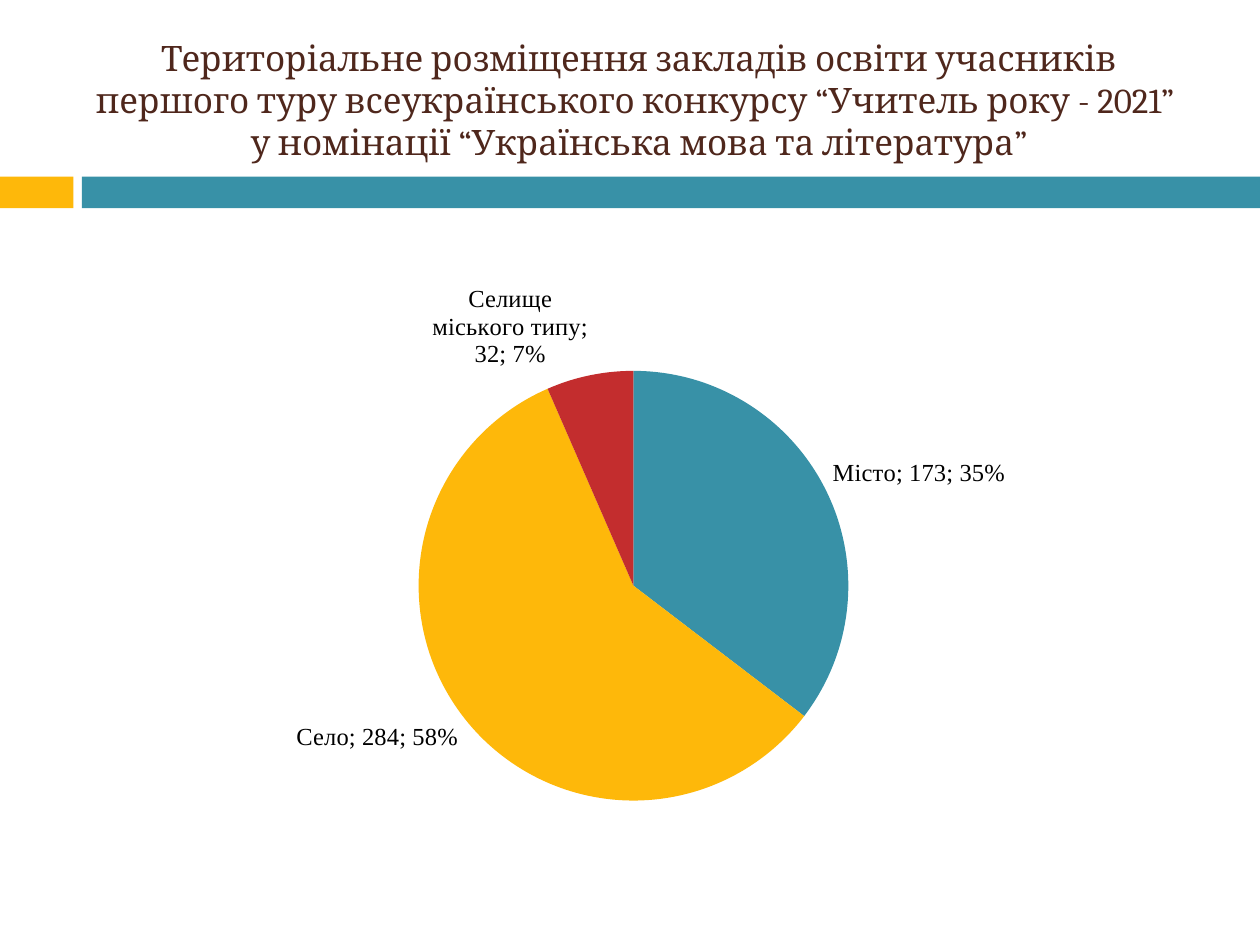
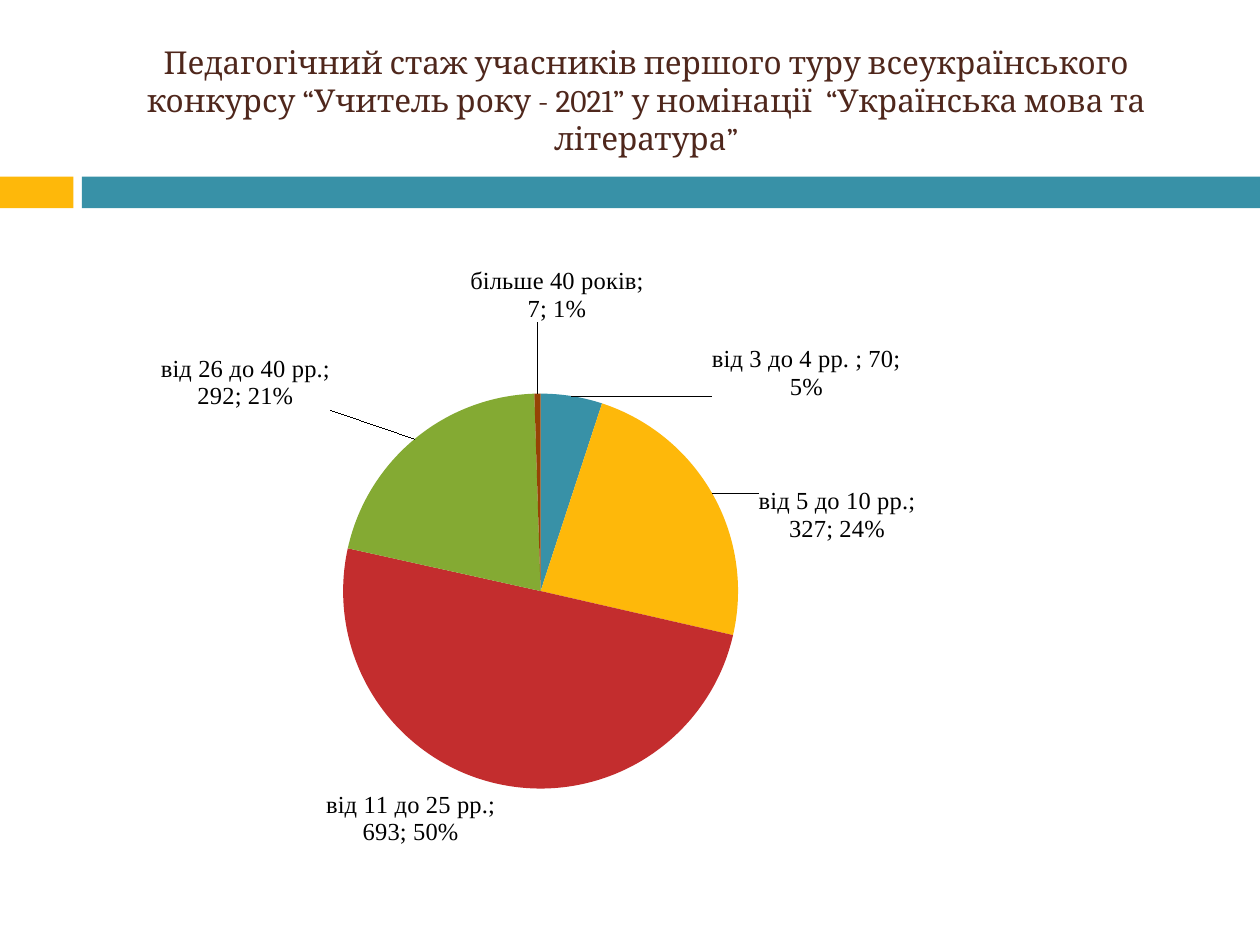
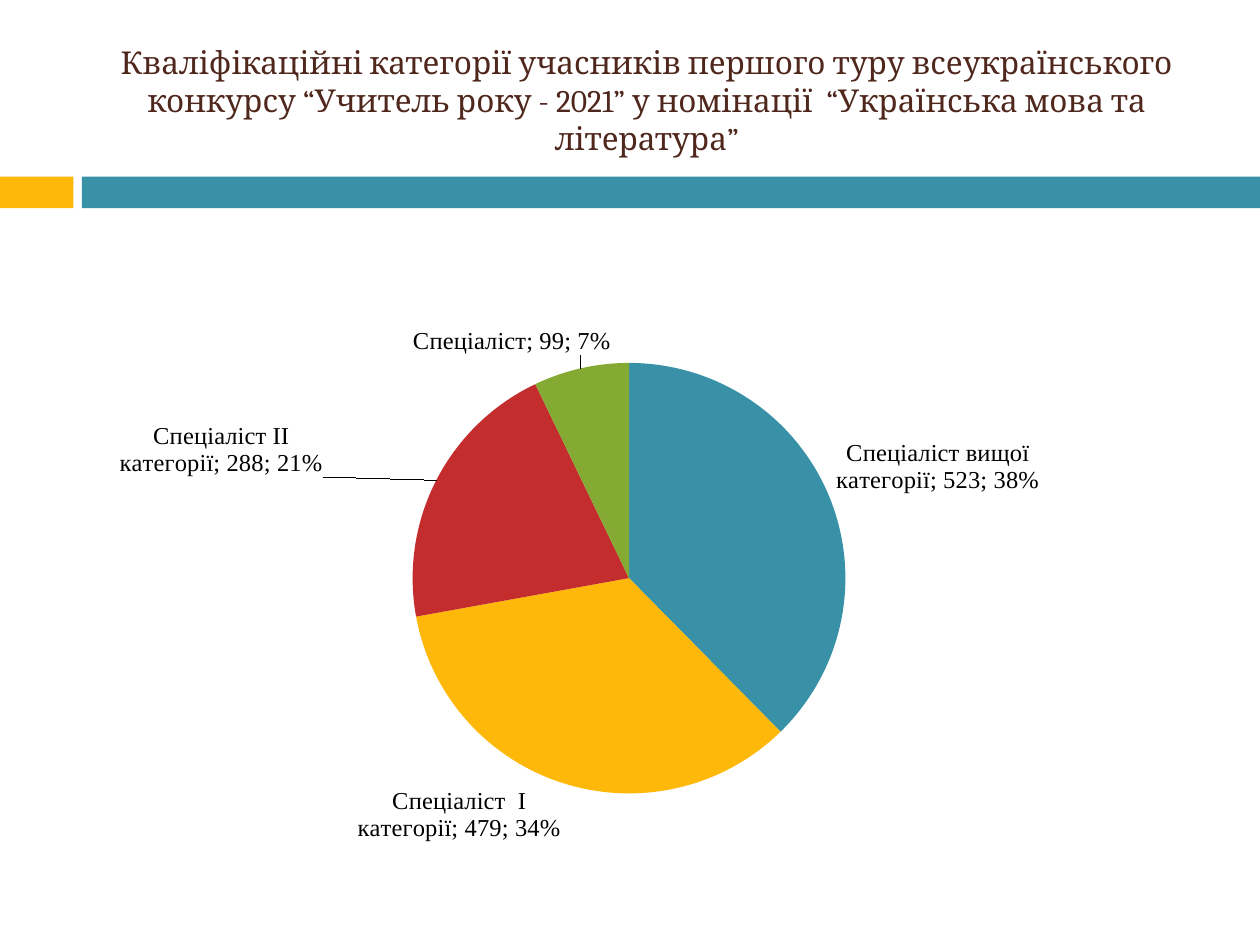
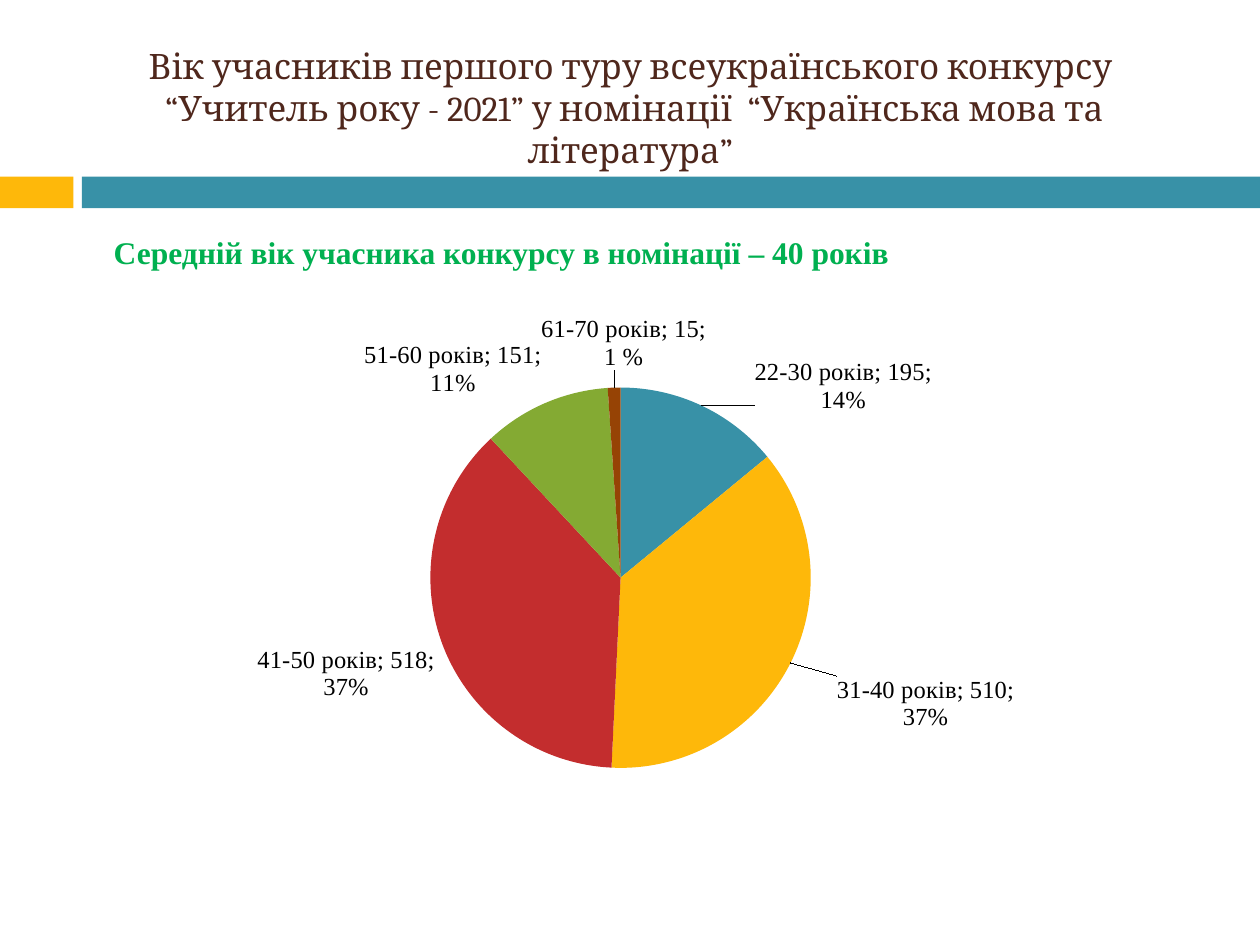
"""Build four slides on the participants of a teaching contest."""
from dataclasses import dataclass, field

from lxml.etree import SubElement
from pptx import Presentation
from pptx.chart.data import CategoryChartData
from pptx.dml.color import RGBColor
from pptx.enum.chart import XL_CHART_TYPE, XL_LABEL_POSITION
from pptx.enum.shapes import MSO_SHAPE
from pptx.enum.text import MSO_ANCHOR, MSO_AUTO_SIZE, PP_ALIGN
from pptx.oxml.ns import qn
from pptx.util import Cm, Pt


@dataclass(frozen=True)
class Theme:
    """Colours, fonts and type sizes of the deck."""
    title: str = "4F271C"
    highlight: str = "00B050"
    label: str = "000000"
    slices: tuple = ("3891A7", "FEB80A", "C32D2E", "84AA33", "964305")
    title_font: str = "Cambria"
    text_font: str = "Times New Roman"
    title_size: int = 20
    long_title_size: int = 18
    highlight_size: int = 18
    label_size: int = 14


@dataclass(frozen=True)
class Survey:
    """One slide: a title and the answers it charts."""
    title: str
    title_box: tuple
    title_size: int
    chart_box: tuple
    answers: dict
    pie_frame: tuple = ()
    label_offsets: dict = field(default_factory=dict)
    label_texts: dict = field(default_factory=dict)
    highlight: str = ""


THEME = Theme()
HIGHLIGHT_BOX = (0.79, 4.57, 18.64, 1.02)
BANDS = (
    ((0, 3.56, 1.48, 0.64), THEME.slices[1]),
    ((1.65, 3.56, 23.75, 0.64), THEME.slices[0]),
)
SURVEYS = (
    Survey(
        "Територіальне розміщення закладів освіти учасників першого туру "
        "всеукраїнського конкурсу “Учитель року - 2021” \v"
        "у номінації “Українська мова та література”",
        (1.4, 0.64, 22.96, 2.74), THEME.title_size,
        (2.97, 5.36, 19.05, 11.13),
        {"Місто": 173, "Село": 284, "Селище міського типу": 32},
    ),
    Survey(
        "Педагогічний стаж учасників першого туру всеукраїнського конкурсу "
        "“Учитель року - 2021” у номінації  “Українська мова та література”",
        (1.7, 0.64, 22.66, 2.74), THEME.long_title_size,
        (1.98, 5.36, 20.04, 11.71),
        {"від 3 до 4 рр. ": 70, "від 5 до 10 рр.": 327, "від 11 до 25 рр.": 693,
         "від 26 до 40 рр.": 292, "більше 40 років": 7},
        pie_frame=(0.09, 0.22, 0.71, 0.68),
        label_offsets={0: (0.14, 0.02), 1: (0.04, 0.09),
                       3: (-0.08, -0.04), 4: (0.02, -0.11)},
    ),
    Survey(
        "Кваліфікаційні категорії учасників першого туру всеукраїнського конкурсу "
        "“Учитель року - 2021” у номінації  “Українська мова та література”",
        (1.19, 0.64, 23.7, 2.74), THEME.long_title_size,
        (2.39, 4.75, 21.44, 12.29),
        {"Спеціаліст вищої категорії": 523, "Спеціаліст  І категорії": 479,
         "Спеціаліст ІІ категорії": 288, "Спеціаліст": 99},
        pie_frame=(0.11, 0.21, 0.74, 0.71),
        label_offsets={2: (-0.1, 0), 3: (0.03, -0.01)},
    ),
    Survey(
        "Вік учасників першого туру всеукраїнського конкурсу\v"
        " “Учитель року - 2021” у номінації  “Українська мова та література”",
        (1.19, 0.79, 23.04, 2.74), THEME.title_size,
        (2.59, 6.12, 20.04, 9.96),
        {"22-30 років": 195, "31-40 років": 510, "41-50 років": 518,
         "51-60 років": 151, "61-70 років": 15},
        pie_frame=(0.09, 0.17, 0.81, 0.77),
        label_offsets={0: (0.05, 0.03), 1: (0.04, 0.02), 4: (0.01, -0.02)},
        label_texts={4: "61-70 років; 15;\n1 %"},
        highlight="Середній вік учасника конкурсу в номінації – 40 років",
    ),
)


def in_cm(box):
    """Turn left, top, width and height into lengths."""
    return [Cm(length) for length in box]


def style_font(font, name, size, color, bold=False):
    """Set the look of a font."""
    font.name, font.size, font.bold = name, Pt(size), bold
    font.color.rgb = RGBColor.from_string(color)


def style_text(frame, *look, align=PP_ALIGN.CENTER):
    """Align all paragraphs of a frame and format their runs."""
    for paragraph in frame.paragraphs:
        paragraph.alignment = align
        for run in paragraph.runs:
            style_font(run.font, *look)


def add_master_bands(slide, master):
    """Draw the bands and move them to the master behind its placeholders."""
    for number, (box, color) in enumerate(BANDS):
        band = slide.shapes.add_shape(MSO_SHAPE.RECTANGLE, *in_cm(box))
        band.shadow.inherit = False
        band.fill.solid()
        band.fill.fore_color.rgb = RGBColor.from_string(color)
        band.line.fill.background()
        band.element.nvSpPr.cNvPr.set("id", str(100 + number))
        master.shapes.element.insert(2, band.element)


def set_title(slide, survey):
    """Fill and place the title placeholder."""
    title = slide.shapes.title
    title.left, title.top, title.width, title.height = in_cm(survey.title_box)
    frame = title.text_frame
    frame.text = survey.title
    frame.word_wrap = True
    frame.auto_size = MSO_AUTO_SIZE.NONE
    frame.vertical_anchor = MSO_ANCHOR.MIDDLE
    style_text(frame, THEME.title_font, survey.title_size, THEME.title)


def add_highlight(slide, text):
    """Add the key finding above the chart."""
    frame = slide.shapes.add_textbox(*in_cm(HIGHLIGHT_BOX)).text_frame
    frame.word_wrap = True
    frame.text = text
    style_text(frame, THEME.text_font, THEME.highlight_size, THEME.highlight, True)


def set_layout(parent, position, **settings):
    """Give a chart part a manual layout as the child at this position."""
    for old_layout in parent.findall(qn("c:layout")):
        parent.remove(old_layout)
    layout = SubElement(parent, qn("c:layout"))
    manual = SubElement(layout, qn("c:manualLayout"))
    for name, value in settings.items():
        SubElement(manual, qn(f"c:{name}")).set("val", str(value))
    parent.insert(position, layout)


def show_category_and_percent(labels):
    """Show category, value and percent, parted by semicolons."""
    for name in ("showCatName", "showVal", "showPercent"):
        labels.find(qn(f"c:{name}")).set("val", "1")
    separator = SubElement(labels, qn("c:separator"))
    separator.text = "; "
    labels.find(qn("c:showBubbleSize")).addnext(separator)


def move_label(chart, index, offset, text):
    """Shift one label from its usual place, with its own wording if given."""
    label = chart.plots[0].series[0].points[index].data_label
    if text:
        label.text_frame.text = text
        style_text(label.text_frame, THEME.text_font, THEME.label_size, THEME.label)
    label.position = XL_LABEL_POSITION.OUTSIDE_END
    element = chart.element.xpath(f".//c:ser/c:dLbls/c:dLbl[c:idx/@val='{index}']")[0]
    set_layout(element, 1, x=offset[0], y=offset[1])
    show_category_and_percent(element)


def add_pie(slide, survey):
    """Add the pie of answers with labels around it."""
    answers = CategoryChartData()
    answers.categories = list(survey.answers)
    answers.add_series("Series 1", list(survey.answers.values()))
    chart = slide.shapes.add_chart(
        XL_CHART_TYPE.PIE, *in_cm(survey.chart_box), answers).chart
    chart.has_title = chart.has_legend = False
    style_font(chart.font, THEME.text_font, THEME.label_size, THEME.label)
    pie = chart.plots[0]
    pie.vary_by_categories = True
    series = pie.series[0]
    for index, color in enumerate(THEME.slices[:len(survey.answers)]):
        look = series.points[index].format
        look.fill.solid()
        look.fill.fore_color.rgb = RGBColor.from_string(color)
        look.line.fill.background()
    series.data_labels.position = XL_LABEL_POSITION.OUTSIDE_END
    show_category_and_percent(chart.element.xpath(".//c:ser/c:dLbls")[0])
    for index, offset in survey.label_offsets.items():
        move_label(chart, index, offset, survey.label_texts.get(index))
    if survey.pie_frame:
        left, top, width, height = survey.pie_frame
        set_layout(chart.element.xpath(".//c:plotArea")[0], 0,
                   layoutTarget="inner", xMode="edge", yMode="edge",
                   x=left, y=top, w=width, h=height)


def main():
    """Build and save the deck."""
    deck = Presentation()
    deck.slide_width, deck.slide_height = Cm(25.4), Cm(19.05)
    title_only = deck.slide_layouts[5]
    for survey in SURVEYS:
        slide = deck.slides.add_slide(title_only)
        set_title(slide, survey)
        if survey.highlight:
            add_highlight(slide, survey.highlight)
        add_pie(slide, survey)
    add_master_bands(deck.slides[0], deck.slide_master)
    deck.save("out.pptx")


if __name__ == "__main__":
    main()
